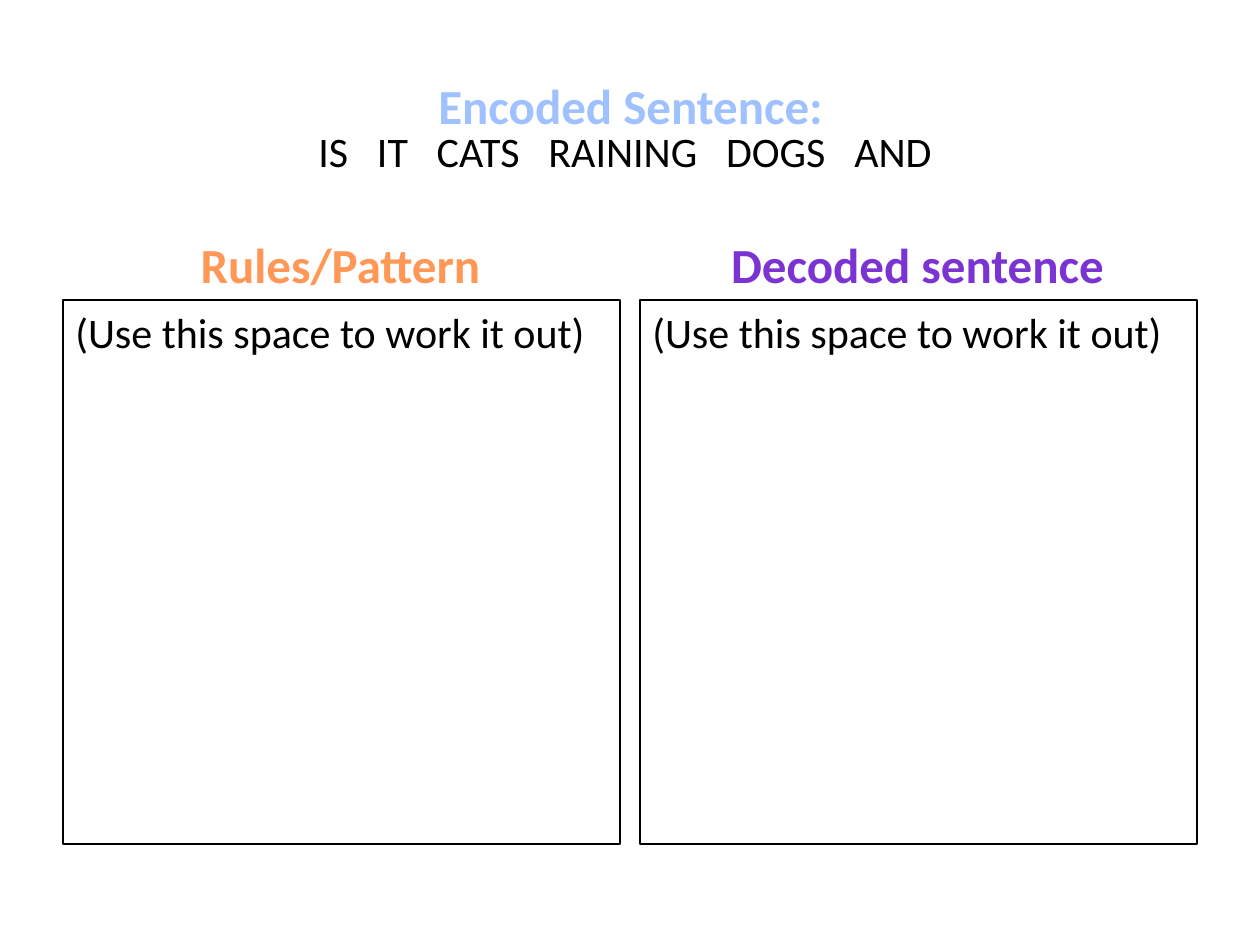
"""Build a sentence-decoding worksheet slide with two work areas."""
from pptx import Presentation
from pptx.dml.color import RGBColor
from pptx.enum.shapes import MSO_SHAPE
from pptx.enum.text import MSO_ANCHOR, PP_ALIGN
from pptx.util import Pt

PX = 914400 / 126
COLORS = {
    "black": "000000",
    "encoded": "A0C1FF",
    "rules": "FF9856",
    "decoded": "7B34D2",
}


def px(length):
    return round(length * PX)


def write(area, text, size=24, color="black", bold=False,
          align=PP_ALIGN.CENTER, anchor=MSO_ANCHOR.TOP, gap=0):
    frame = area.text_frame
    frame.word_wrap = True
    frame.vertical_anchor = anchor
    paragraph = frame.paragraphs[0]
    paragraph.alignment = align
    pieces = text.replace(" ", "| |").split("|") if gap else [text]
    for piece in pieces:
        run = paragraph.add_run()
        run.text = piece
        run.font.name = "Calibri"
        run.font.size = Pt(size)
        run.font.bold = bold
        run.font.color.rgb = RGBColor.from_string(COLORS[color])
        if piece == " ":
            run._r.get_or_add_rPr().set("spc", str(gap * 100))


prs = Presentation()
prs.slide_width, prs.slide_height = px(1260), px(945)
slide = prs.slides.add_slide(prs.slide_layouts[6])

sentence = slide.shapes.add_textbox(px(58), px(120), px(1134), px(62))
write(sentence, "IS IT CATS RAINING DOGS AND", anchor=MSO_ANCHOR.MIDDLE, gap=11)

column_width = 557
headings = [
    ("Encoded Sentence:", "encoded", 352, 69),
    ("Rules/Pattern", "rules", 62, 228),
    ("Decoded sentence", "decoded", 639, 228),
]
for title, color, left, top in headings:
    heading = slide.shapes.add_textbox(px(left), px(top), px(column_width), px(72))
    write(heading, title, size=28, color=color, bold=True)

for left in (63, 640):
    workspace = slide.shapes.add_shape(
        MSO_SHAPE.RECTANGLE, px(left), px(300), px(column_width), px(544))
    workspace.shadow.inherit = False
    workspace.fill.background()
    workspace.line.color.rgb = RGBColor.from_string(COLORS["black"])
    workspace.line.width = Pt(0.75)
    write(workspace, "(Use this space to work it out)", align=PP_ALIGN.LEFT)

prs.save("out.pptx")
